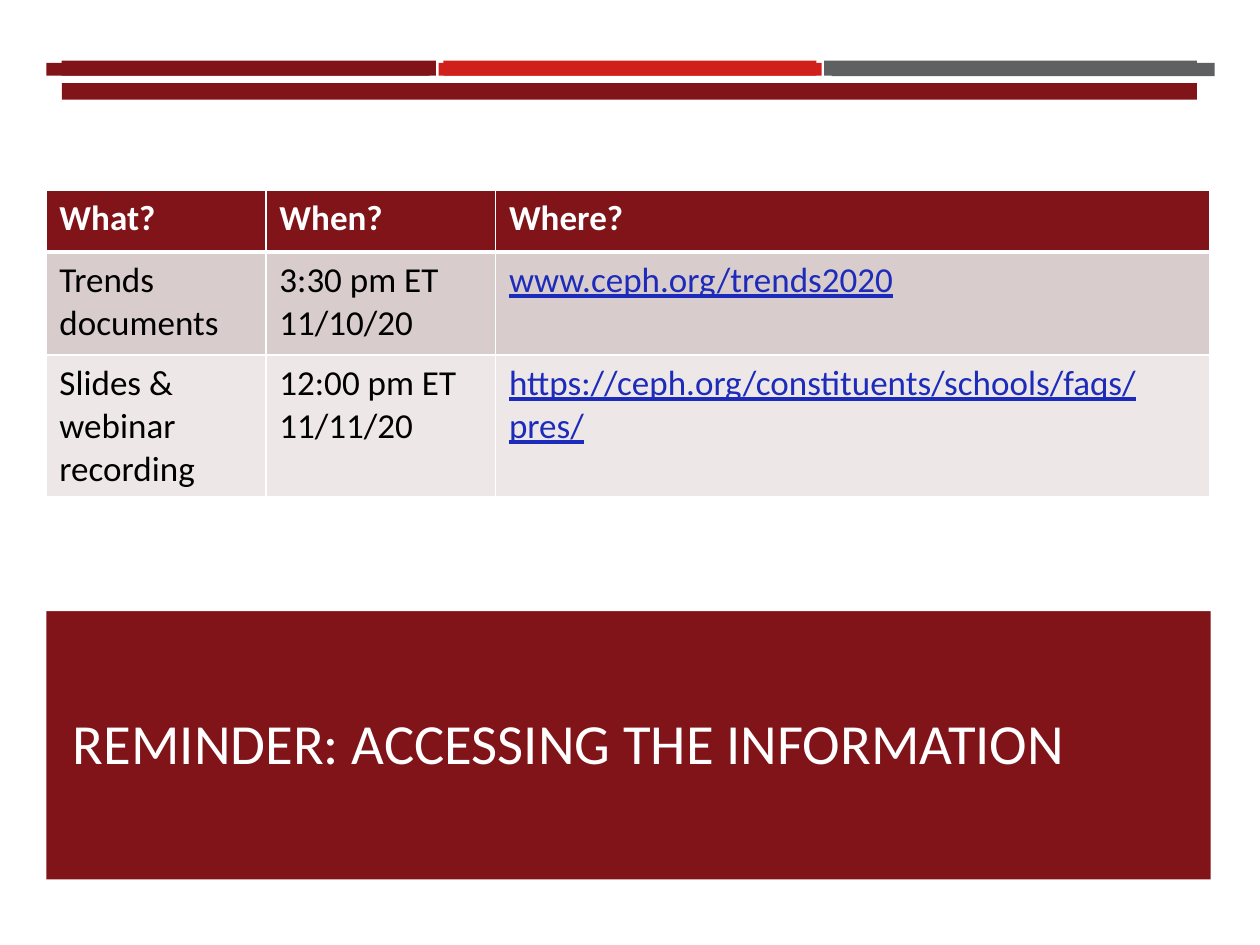
"""Build the reminder slide on accessing the information."""
from lxml.etree import SubElement
from pptx import Presentation
from pptx.dml.color import RGBColor
from pptx.enum.shapes import MSO_SHAPE as Shape
from pptx.enum.text import MSO_ANCHOR as Anchor
from pptx.oxml.ns import qn
from pptx.util import Pt

COLORS = {
    "maroon": "811419", "red": "D0201C", "gray": "5F6062", "white": "FFFFFF",
    "black": "000000", "link": "1C2BBA", "rose": "D8CCCC", "pale": "EDE7E8",
}
FONT = "Calibri"
BARS = [
    (35.3, 34.6, 213.8, 8.6, "maroon"),
    (470.9, 34.6, 213.1, 8.6, "gray"),
    (253.4, 34.6, 213.1, 8.6, "red"),
    (35.3, 47.5, 648.7, 99.4, "maroon"),
    (26.6, 36, 218.9, 7.2, "maroon"),
    (475.2, 36, 218.9, 7.6, "gray"),
    (250.6, 36, 218.9, 7.2, "red"),
    (26.6, 242.6, 665.3, 259.9, "maroon"),
    (0, 56.9, 720, 292.3, "white"),
]
ROWS = [
    ["What?", "When?", "Where?"],
    ["Trends documents", "3:30 pm ET 11/10/20", "www.ceph.org/trends2020"],
    ["Slides & webinar recording", "12:00 pm ET\n11/11/20",
     "https://ceph.org/constituents/schools/faqs/pres/"],
]
ROW_FILLS = ["maroon", "rose", "pale"]
ROW_HEIGHTS = [35.3, 59, 81]
COLUMN_WIDTHS = [125.7, 131.2, 408.3]


def rgb(name):
    return RGBColor.from_string(COLORS[name])


def style_font(paragraph, size, color, bold=False, underline=False):
    font = paragraph.font
    font.name, font.size, font.bold = FONT, Pt(size), bold
    font.underline = underline
    font.color.rgb = rgb(color)


def add_bar(slide, left, top, width, height, color):
    shape = slide.shapes.add_shape(
        Shape.RECTANGLE, Pt(left), Pt(top), Pt(width), Pt(height))
    shape.shadow.inherit = False
    shape.fill.solid()
    shape.fill.fore_color.rgb = rgb(color)
    shape.line.fill.background()


def add_title(slide, text):
    frame = slide.shapes.add_textbox(
        Pt(34.6), Pt(362.9), Pt(649.4), Pt(84.2)).text_frame
    frame.word_wrap = True
    frame.vertical_anchor = Anchor.BOTTOM
    frame.text = text
    style_font(frame.paragraphs[0], 32.4, "white")


def set_borders(cell, bottom_width):
    properties = cell._tc.get_or_add_tcPr()
    widths = {"a:lnL": 1, "a:lnR": 1, "a:lnT": 1, "a:lnB": bottom_width}
    for index, (tag, width) in enumerate(widths.items()):
        line = SubElement(properties, qn(tag), w=str(Pt(width)))
        fill = SubElement(line, qn("a:solidFill"))
        SubElement(fill, qn("a:srgbClr"), val=COLORS["white"])
        properties.insert(index, line)


def fill_cell(cell, text, row, column):
    header = row == 0
    link = column == 2 and not header
    color = "white" if header else "link" if link else "black"
    cell.margin_left = cell.margin_right = Pt(7.7)
    cell.margin_top = cell.margin_bottom = Pt(4)
    cell.fill.solid()
    cell.fill.fore_color.rgb = rgb(ROW_FILLS[row])
    set_borders(cell, 3 if header else 1)
    cell.text = text
    for paragraph in cell.text_frame.paragraphs:
        style_font(paragraph, 20, color, bold=header, underline=link)


def add_schedule(slide):
    table = slide.shapes.add_table(
        len(ROWS), len(COLUMN_WIDTHS), Pt(26.3), Pt(108.7),
        Pt(sum(COLUMN_WIDTHS)), Pt(sum(ROW_HEIGHTS))).table
    for column, width in zip(table.columns, COLUMN_WIDTHS):
        column.width = Pt(width)
    for row, texts in enumerate(ROWS):
        table.rows[row].height = Pt(ROW_HEIGHTS[row])
        for column, text in enumerate(texts):
            fill_cell(table.cell(row, column), text, row, column)


def main():
    presentation = Presentation()
    presentation.slide_width, presentation.slide_height = Pt(720), Pt(540)
    slide = presentation.slides.add_slide(presentation.slide_layouts[6])
    for bar in BARS:
        add_bar(slide, *bar)
    add_title(slide, "REMINDER: ACCESSING THE INFORMATION")
    add_schedule(slide)
    presentation.save("out.pptx")


if __name__ == "__main__":
    main()
